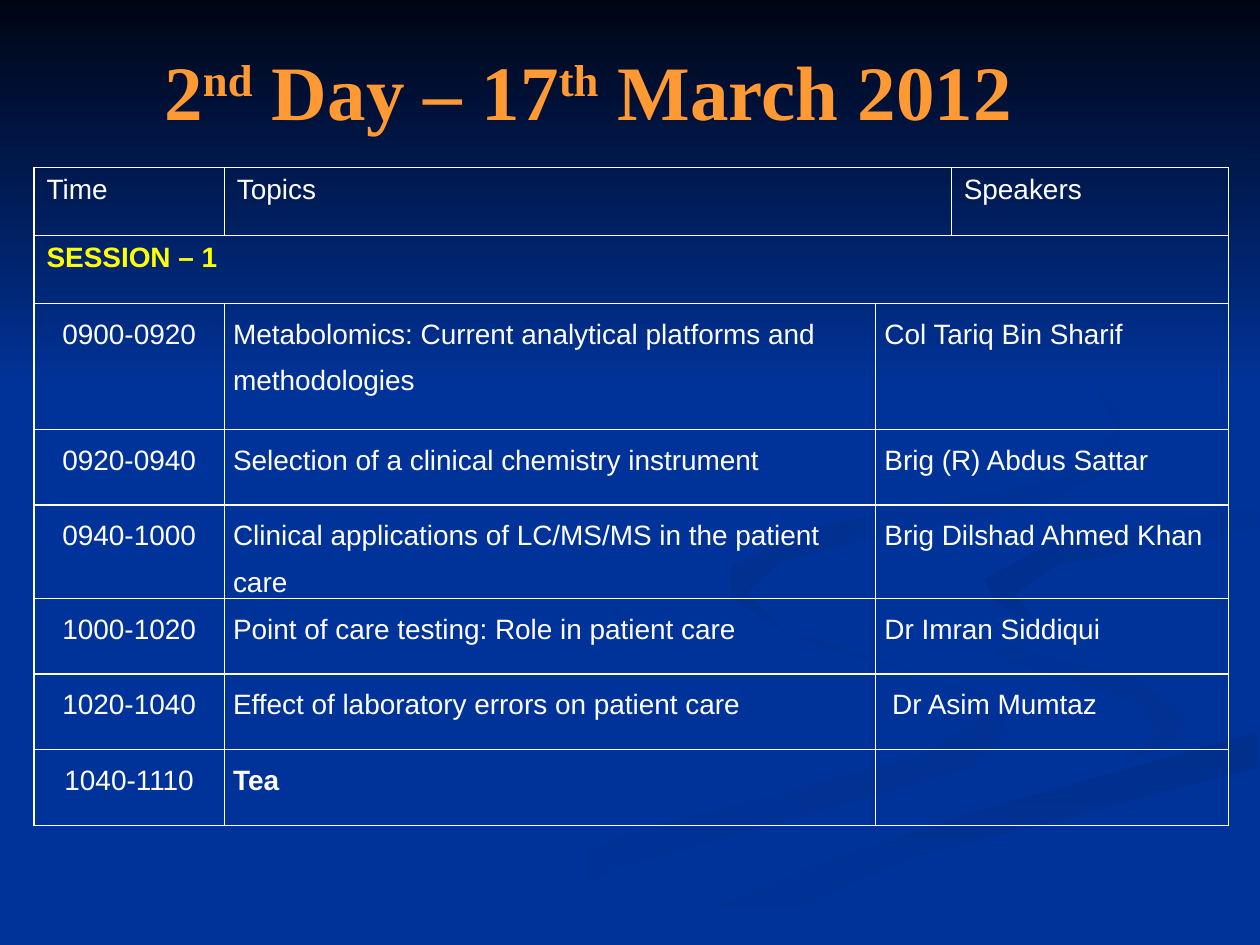
"""Build the programme slide for the second day."""
from lxml import etree
from pptx import Presentation, util as u
from pptx.dml.color import RGBColor
from pptx.enum import text
from pptx.oxml.ns import qn

WIDE, HIGH = u.Inches(10), u.Inches(7.5)
BLUE = RGBColor(0x00, 0x33, 0x99)
NIGHT = RGBColor(0x00, 0x05, 0x14)
HAZE = RGBColor(0x00, 0x31, 0x93)
DUSK = RGBColor(0x00, 0x2F, 0x8C)
ORANGE = RGBColor(0xFF, 0x99, 0x33)
YELLOW = RGBColor(0xFF, 0xFF, 0x00)
WHITE = RGBColor(0xFF, 0xFF, 0xFF)

BODY = dict(name="Arial", size=u.Pt(16), bold=False)
HEAD = dict(name="Times New Roman", size=u.Pt(44), bold=True)
PADS = dict(margin_left=0.07, margin_right=0.07, margin_top=0, margin_bottom=0)
COLS = (1.51, 5.17, 0.6, 2.2)
ROWS = (0.54, 0.54, 1, 0.6, 0.65, 0.6, 0.6, 0.6)
TALKS = (
    ("0900-0920", "Metabolomics: Current analytical platforms and methodologies",
     "Col Tariq Bin Sharif"),
    ("0920-0940", "Selection of a clinical chemistry instrument", "Brig (R) Abdus Sattar"),
    ("0940-1000", "Clinical applications of LC/MS/MS in the patient care",
     "Brig Dilshad Ahmed Khan"),
    ("1000-1020", "Point of care testing: Role in patient care", "Dr Imran Siddiqui"),
    ("1020-1040", "Effect of laboratory errors on patient care", " Dr Asim Mumtaz"),
    ("1040-1110", "Tea", ""),
)
TITLE = (("2", 0), ("nd", 30), (" Day – 17", 0), ("th", 30), (" March 2012", 0))

SWIRLS = (
    (BLUE, HAZE, 0, (
        (7.8, 5.5), (6.4, 5.1), (5.8, 4.8), (5.75, 4.59), (5.8, 4.85), (7.3, 5.35),
        (7.85, 5.65), (7.3, 6), (5, 6.6), (3, 7.49), (3.6, 7.49), (5, 6.87),
        (7.7, 6.1), (8, 5.8))),
    (BLUE, HAZE, 45, (
        (9.43, 5.7), (9.05, 5.4), (7.6, 5), (7.24, 4.64), (7.35, 4.9), (8.1, 5.3),
        (9, 5.57), (9.18, 5.8), (8.94, 6.05), (9.35, 5.87))),
    (DUSK, BLUE, 90, (
        (5.03, 7.49), (5.7, 7.49), (7.2, 6.82), (9.98, 6.09), (9.98, 5.81),
        (7.64, 6.47), (6.3, 6.93))),
    (DUSK, BLUE, 45, (
        (7.81, 4.6), (7.9, 4.78), (8.26, 4.96), (8.05, 4.72), (8.4, 4.48),
        (9.98, 4.2), (9.98, 4.02), (8.35, 4.3))),
    (DUSK, BLUE, 45, (
        (6.8, 4.3), (8.25, 4), (8.85, 3.7), (8.9, 3.25), (8.4, 2.75), (7.62, 2.33),
        (8.6, 2.9), (8.88, 3.4), (8.4, 3.8), (6.4, 4.2), (5.8, 4.5), (5.8, 4.75),
        (6.2, 5), (5.93, 4.7), (6.2, 4.45))),
    (NIGHT, BLUE, 90, ((0, 0), (0, 3.08), (10, 3.08), (10, 0))),
)


def style(font, hue, form):
    """Apply format values and a colour to a font."""
    for key, val in form.items():
        setattr(font, key, val)
    font.color.rgb = hue


def shade(slide, start, stop, turn, dots):
    """Draw a gradient outline from points in inches."""
    spots = [(u.Inches(x), u.Inches(y)) for x, y in dots]
    pen = slide.shapes.build_freeform(*spots[0])
    pen.add_line_segments(spots[1:], close=True)
    shape = pen.convert_to_shape()
    shape.shadow.inherit = False
    shape.line.fill.background()
    shape.fill.gradient()
    shape.fill.gradient_angle = (360 - turn) % 360
    for mark, hue in zip(shape.fill.gradient_stops, (start, stop)):
        mark.color.rgb = hue


def head(slide):
    """Place the title in front with raised ordinals."""
    box = slide.shapes.title
    slide.shapes._spTree.append(box._element)
    place = dict(left=0.042 * WIDE, top=0.033 * HIGH, width=0.85 * WIDE, height=0.123 * HIGH)
    for key, val in place.items():
        setattr(box, key, int(val))
    box.text_frame.vertical_anchor = text.MSO_ANCHOR.MIDDLE
    para = box.text_frame.paragraphs[0]
    para.alignment = text.PP_ALIGN.CENTER
    for words, rise in TITLE:
        run = para.add_run()
        run.text = words
        style(run.font, ORANGE, HEAD)
        if rise:
            run._r.get_or_add_rPr().set("baseline", str(rise * 1000))


def frame(cell):
    """Give a cell white borders and no fill."""
    props = cell._tc.get_or_add_tcPr()
    for side in ("lnL", "lnR", "lnT", "lnB"):
        line = etree.SubElement(props, qn("a:" + side), w=str(int(u.Pt(1))))
        fill = etree.SubElement(line, qn("a:solidFill"))
        etree.SubElement(fill, qn("a:srgbClr"), val=str(WHITE))
    cell.fill.background()


def write(cell, words, hue=WHITE, bold=False):
    """Put styled words in a cell and return the paragraph."""
    para = cell.text_frame.paragraphs[0]
    para.text = words
    style(para.font, hue, BODY)
    for run in para.runs:
        style(run.font, hue, {**BODY, "bold": bold})
    return para


def talk(grid, row, words):
    """Fill one row of the programme."""
    grid.cell(row, 2).merge(grid.cell(row, 3))
    for col, item in enumerate(words):
        cell = grid.cell(row, col)
        for key, val in PADS.items():
            setattr(cell, key, u.Inches(val))
        para = write(cell, item, bold=item == "Tea")
        para.line_spacing = 1.5
        if col != 1 or row == 2:
            para.space_after = u.Pt(10)
        if col == 0:
            para.alignment = text.PP_ALIGN.CENTER


def plan(slide):
    """Add the programme table."""
    area = [u.Inches(n) for n in (0.27, 1.33, sum(COLS), sum(ROWS))]
    grid = slide.shapes.add_table(len(ROWS), len(COLS), *area).table
    grid.first_row = grid.horz_banding = False
    for col, size in zip(grid.columns, COLS):
        col.width = u.Inches(size)
    for row, size in zip(grid.rows, ROWS):
        row.height = u.Inches(size)
    for cell in grid.iter_cells():
        frame(cell)
    grid.cell(0, 1).merge(grid.cell(0, 2))
    grid.cell(1, 0).merge(grid.cell(1, 3))
    for col, words in ((0, "Time"), (1, "Topics"), (3, "Speakers")):
        write(grid.cell(0, col), words)
    write(grid.cell(1, 0), "SESSION – 1", YELLOW, True)
    for row, words in enumerate(TALKS, 2):
        talk(grid, row, words)


def main():
    """Build and save the slide."""
    deck = Presentation()
    deck.slide_width, deck.slide_height = WIDE, HIGH
    slide = deck.slides.add_slide(deck.slide_layouts[5])
    slide.background.fill.solid()
    slide.background.fill.fore_color.rgb = BLUE
    for swirl in SWIRLS:
        shade(slide, *swirl)
    head(slide)
    plan(slide)
    deck.save("out.pptx")


if __name__ == "__main__":
    main()
